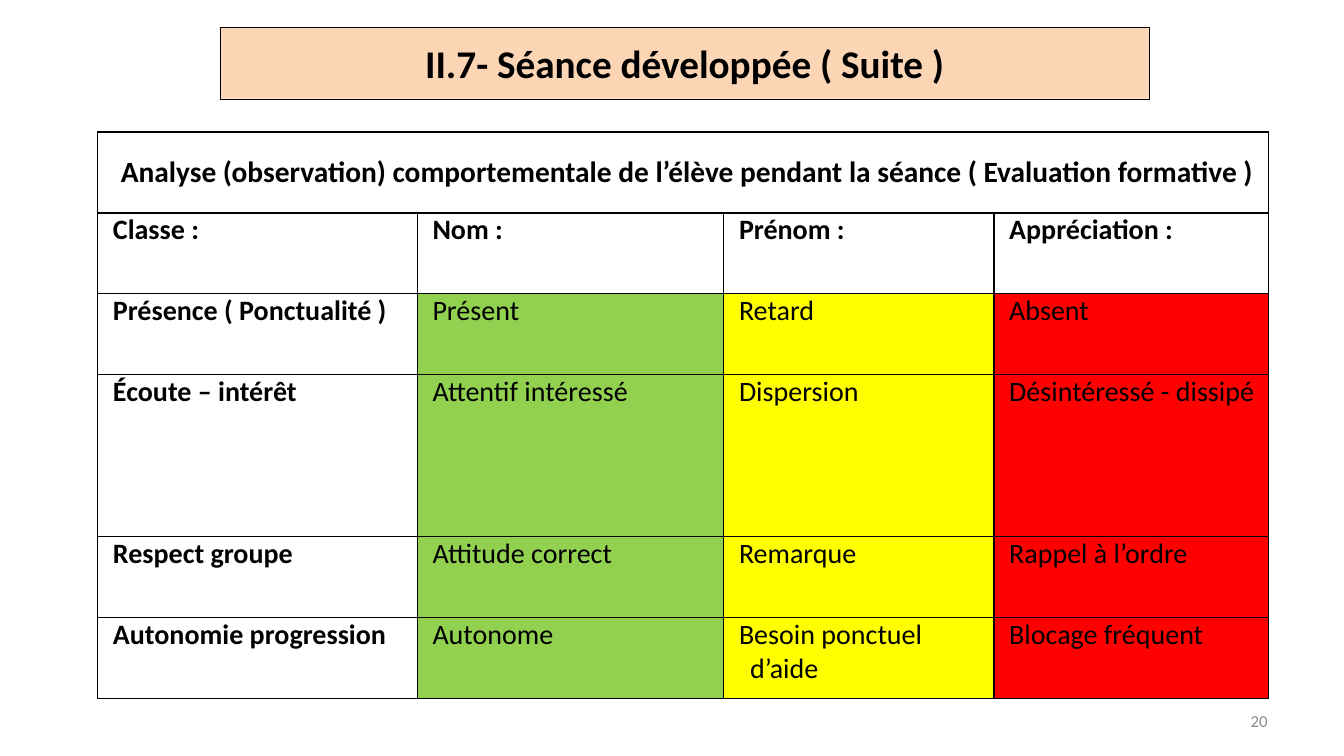
from lxml.etree import SubElement
from pptx import Presentation
from pptx.dml.color import RGBColor
from pptx.enum.shapes import MSO_SHAPE as Shape
from pptx.enum.text import MSO_ANCHOR as Anchor, PP_ALIGN as Align
from pptx.oxml.ns import qn
from pptx.util import Inches, Pt

COLORS = {
    "black": "000000",
    "peach": "FCD5B5",
    "gray": "8C8C8C",
    "good": "92D050",
    "medium": "FFFF00",
    "bad": "FF0000",
}
HEADING = "Analyse (observation) comportementale de l’élève pendant la séance ( Evaluation formative )"
LABELS = ["Classe :", "Nom :", "Prénom :", "Appréciation :"]
CRITERIA = [
    ["Présence ( Ponctualité )", "Présent", "Retard", "Absent"],
    ["Écoute – intérêt", "Attentif intéressé", "Dispersion", "Désintéressé - dissipé"],
    ["Respect groupe", "Attitude correct", "Remarque", "Rappel à l’ordre"],
    ["Autonomie progression", "Autonome", "Besoin ponctuel d’aide", "Blocage fréquent"],
]
RATINGS = [None, "good", "medium", "bad"]
COLUMN_WIDTHS = [3.17, 3.04, 2.68, 2.72]
ROW_UNITS = [1, 1, 1, 2, 1, 1]


def rgb(name):
    return RGBColor.from_string(COLORS[name])


def write(frame, text, size, color="black", bold=False, align=Align.LEFT):
    paragraph = frame.paragraphs[0]
    paragraph.text = text
    paragraph.alignment = align
    font = paragraph.font
    font.name, font.size, font.bold = "Calibri", Pt(size), bold
    font.color.rgb = rgb(color)
    return paragraph


def add_title(slide, text):
    banner = slide.shapes.add_shape(
        Shape.RECTANGLE, Inches(2.18), Inches(0.27), Inches(9.22), Inches(0.71))
    banner.shadow.inherit = False
    banner.fill.solid()
    banner.fill.fore_color.rgb = rgb("peach")
    banner.line.color.rgb = rgb("black")
    banner.line.width = Pt(0.25)
    banner.text_frame.vertical_anchor = Anchor.MIDDLE
    write(banner.text_frame, text, 28, bold=True, align=Align.CENTER)


def add_page_number(slide, number):
    box = slide.shapes.add_textbox(Inches(9.56), Inches(6.95), Inches(3.11), Inches(0.4))
    box.text_frame.word_wrap = True
    box.text_frame.vertical_anchor = Anchor.MIDDLE
    write(box.text_frame, number, 12, "gray", align=Align.RIGHT)


def add_borders(cell):
    properties = cell._tc.get_or_add_tcPr()
    for side in ("a:lnL", "a:lnR", "a:lnT", "a:lnB"):
        border = SubElement(properties, qn(side), w=str(Pt(1)))
        fill = SubElement(border, qn("a:solidFill"))
        SubElement(fill, qn("a:srgbClr"), val=COLORS["black"])


def style_cell(cell, rating=None):
    cell.margin_left = cell.margin_right = Inches(0.07)
    cell.margin_top = cell.margin_bottom = 0
    add_borders(cell)
    if rating:
        cell.fill.solid()
        cell.fill.fore_color.rgb = rgb(rating)
    else:
        cell.fill.background()


def write_cell(cell, text, size=20, bold=False, align=Align.LEFT):
    """Write cell text with its hanging indent."""
    paragraph = write(cell.text_frame, text, size, bold=bold, align=align)
    paragraph.space_before = Pt(6)
    indents = paragraph._p.get_or_add_pPr()
    indents.set("marL", str(Inches(0.19)))
    indents.set("indent", str(Inches(-0.11)))


def add_evaluation_table(slide):
    height = Inches(5.62)
    table = slide.shapes.add_table(
        len(ROW_UNITS), len(COLUMN_WIDTHS),
        Inches(0.97), Inches(1.31), Inches(sum(COLUMN_WIDTHS)), height).table
    table.first_row = table.horz_banding = False
    for column, width in zip(table.columns, COLUMN_WIDTHS):
        column.width = Inches(width)
    for row, units in zip(table.rows, ROW_UNITS):
        row.height = height * units // sum(ROW_UNITS)

    for cell in table.rows[0].cells:
        style_cell(cell)
    heading = table.cell(0, 0)
    heading.merge(table.cell(0, len(COLUMN_WIDTHS) - 1))
    heading.vertical_anchor = Anchor.MIDDLE
    write_cell(heading, HEADING, 21, True, Align.CENTER)

    for r, texts in enumerate([LABELS] + CRITERIA, start=1):
        for c, text in enumerate(texts):
            rating = RATINGS[c] if r > 1 else None
            cell = table.cell(r, c)
            style_cell(cell, rating)
            write_cell(cell, text, bold=rating is None)


def main():
    deck = Presentation()
    deck.slide_width, deck.slide_height = Inches(13.33), Inches(7.5)
    slide = deck.slides.add_slide(deck.slide_layouts[6])
    add_page_number(slide, "20")
    add_title(slide, "II.7- Séance développée ( Suite )")
    add_evaluation_table(slide)
    deck.save("out.pptx")


if __name__ == "__main__":
    main()
